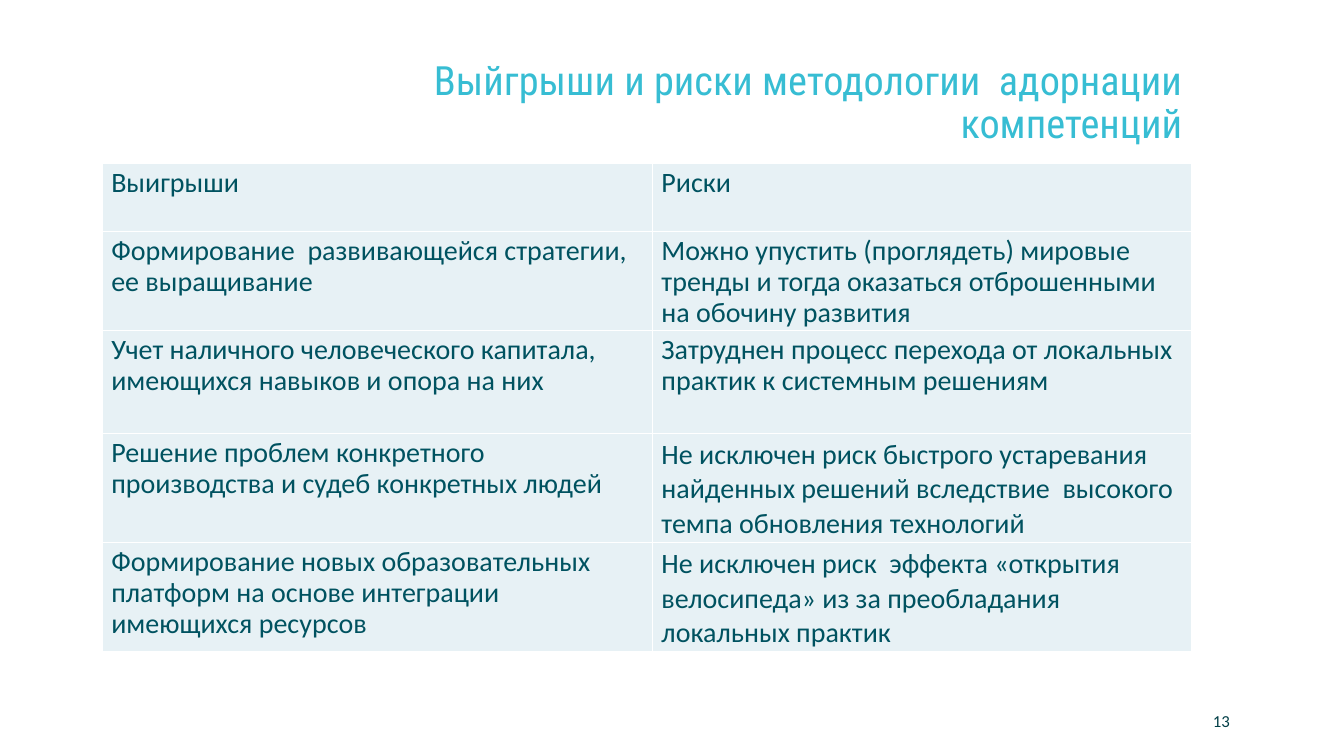
from lxml import etree
from pptx import Presentation
from pptx.dml.color import RGBColor
from pptx.enum import text
from pptx.oxml import ns
from pptx.util import Pt

COLORS = {"title": "37BDD3", "number": "023F47", "body": "005260",
          "cell": "E7F1F5", "border": "FFFFFF"}
BODY_FONT = "Calibri"
COLUMN_WIDTHS = (393, 385)
ROW_HEIGHTS = (48.6, 51, 73.6, 73.6, 73.6)
ROWS = [
    ("Выигрыши", "Риски"),
    ("Формирование  развивающейся стратегии, ее выращивание",
     "Можно упустить (проглядеть) мировые тренды и тогда оказаться "
     "отброшенными на обочину развития"),
    ("Учет наличного человеческого капитала,  имеющихся навыков и опора на них",
     "Затруднен процесс перехода от локальных практик к системным решениям"),
    ("Решение проблем конкретного производства и судеб конкретных людей",
     "Не исключен риск быстрого устаревания найденных решений вследствие  "
     "высокого темпа обновления технологий"),
    ("Формирование новых образовательных платформ на основе интеграции "
     "имеющихся ресурсов",
     "Не исключен риск  эффекта «открытия велосипеда» из за преобладания  "
     "локальных практик"),
]
LOOSE_CELLS = {(3, 1), (4, 1)}  # cells with full line spacing


def color(name):
    return RGBColor.from_string(COLORS[name])


def style(para, font_name, size, color_name, align=None):
    para.alignment = align
    para.font.name = font_name
    para.font.size = Pt(size)
    para.font.color.rgb = color(color_name)


def add_title(page, wording):
    title = page.shapes.title
    title.left, title.top, title.width, title.height = Pt(253.4), Pt(43), Pt(598.3), Pt(89.3)
    frame = title.text_frame
    frame.word_wrap = True
    frame.auto_size = text.MSO_AUTO_SIZE.NONE
    frame.vertical_anchor = text.MSO_ANCHOR.TOP
    frame.margin_top = 0
    frame.text = wording
    para = frame.paragraphs[0]
    para.line_spacing = 0.9
    style(para, "Roboto Condensed", 28.8, "title", text.PP_ALIGN.RIGHT)


def add_page_number(page, number):
    box = page.shapes.add_textbox(Pt(851.8), Pt(500.4), Pt(33.8), Pt(28.8))
    frame = box.text_frame
    frame.word_wrap = True
    frame.vertical_anchor = text.MSO_ANCHOR.MIDDLE
    frame.text = number
    style(frame.paragraphs[0], BODY_FONT, 12, "number", text.PP_ALIGN.RIGHT)


def set_borders(cell):
    props = cell._tc.get_or_add_tcPr()
    for index, side in enumerate(("a:lnL", "a:lnR", "a:lnT", "a:lnB")):
        line = etree.Element(ns.qn(side), w=str(Pt(1)))
        fill = etree.SubElement(line, ns.qn("a:solidFill"))
        etree.SubElement(fill, ns.qn("a:srgbClr"), val=COLORS["border"])
        props.insert(index, line)


def fill_cell(cell, wording, loose):
    cell.fill.solid()
    cell.fill.fore_color.rgb = color("cell")
    set_borders(cell)
    cell.margin_left = cell.margin_right = Pt(6.5)
    cell.margin_top = cell.margin_bottom = Pt(3)
    cell.text = wording
    para = cell.text_frame.paragraphs[0]
    if not loose:
        para.line_spacing = 0.9
        para.space_after = Pt(2)
    style(para, BODY_FONT, 20, "body")


def add_comparison(page):
    table = page.shapes.add_table(
        len(ROWS), len(COLUMN_WIDTHS), Pt(73), Pt(116.8),
        Pt(sum(COLUMN_WIDTHS)), Pt(sum(ROW_HEIGHTS))).table
    for column, width in zip(table.columns, COLUMN_WIDTHS):
        column.width = Pt(width)
    for r, (height, wordings) in enumerate(zip(ROW_HEIGHTS, ROWS)):
        table.rows[r].height = Pt(height)
        for c, wording in enumerate(wordings):
            fill_cell(table.cell(r, c), wording, (r, c) in LOOSE_CELLS)


def main():
    deck = Presentation()
    deck.slide_width, deck.slide_height = Pt(960), Pt(540)
    page = deck.slides.add_slide(deck.slide_layouts[5])
    # Heading and page number
    add_title(page, "Выйгрыши и риски методологии  адорнации компетенций")
    add_page_number(page, "13")
    # Gains and risks
    add_comparison(page)
    deck.save("out.pptx")


if __name__ == "__main__":
    main()
